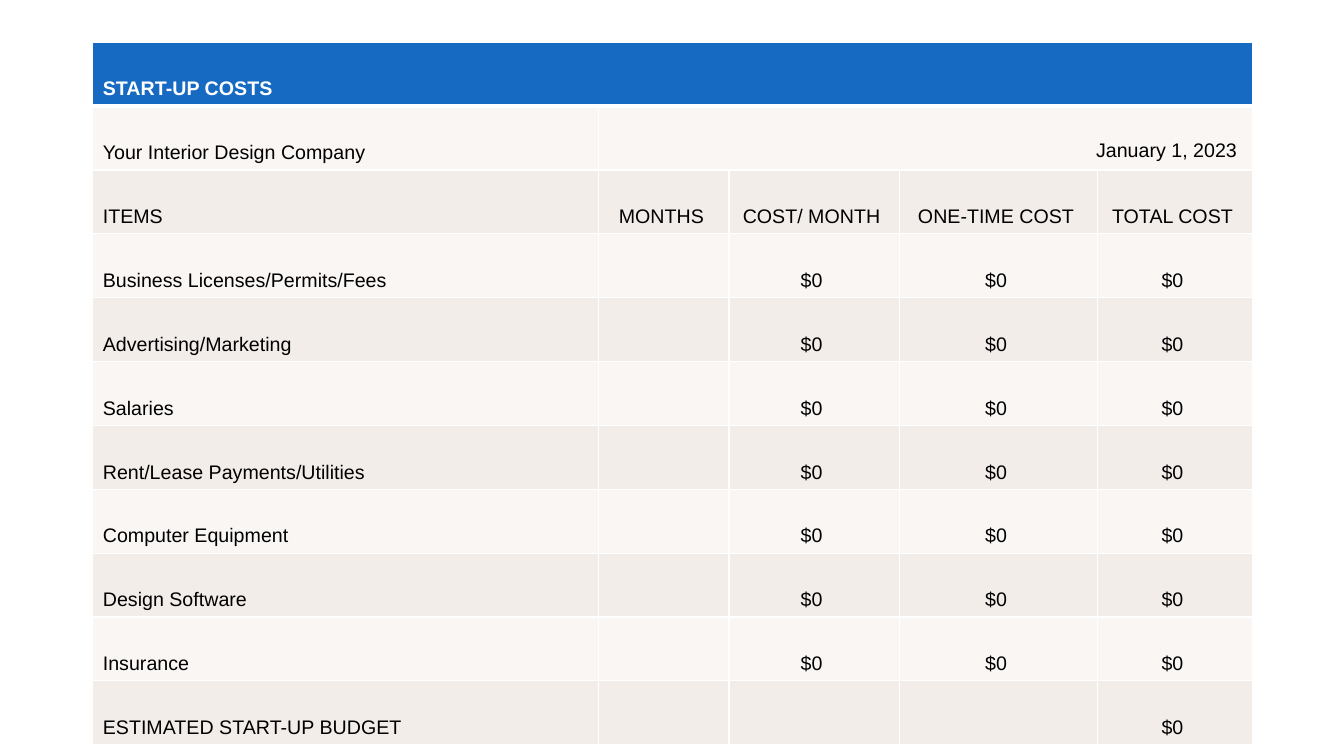
from lxml import etree
from pptx import Presentation
from pptx import util as u
from pptx.dml.color import RGBColor
from pptx.enum import text
from pptx.oxml.ns import qn

LEFT, CENTER, RIGHT = text.PP_ALIGN.LEFT, text.PP_ALIGN.CENTER, text.PP_ALIGN.RIGHT
COLUMN_WIDTHS = [5.02, 1.29, 1.69, 1.97, 1.53]
EXPENSES = [
    "Business Licenses/Permits/Fees",
    "Advertising/Marketing",
    "Salaries",
    "Rent/Lease Payments/Utilities",
    "Computer Equipment",
    "Design Software",
    "Insurance",
]
COST_ROWS = [
    ["START-UP COSTS", "", "", "", ""],
    ["Your Interior Design Company", "January 1, 2023", "", "", ""],
    ["ITEMS", "MONTHS", "COST/ MONTH", "ONE-TIME COST", "TOTAL COST"],
    *[[expense, "", "$0", "$0", "$0"] for expense in EXPENSES],
    ["ESTIMATED START-UP BUDGET", "", "", "", "$0"],
]


def color(hex_string):
    return RGBColor.from_string(hex_string)


class CostSlide:
    font = "Arial"
    size = 14
    ink = "000000"
    white = "FFFFFF"
    header_blue = "166AC2"
    pale = "F9F6F4"
    sand = "E8DCD4"

    def __init__(self, slide):
        self.slide = slide

    def table(self, left, top, height, widths, rows):
        frame = self.slide.shapes.add_table(
            len(rows), len(widths), u.Inches(left), u.Inches(top),
            u.Inches(sum(widths)), u.Inches(height))
        grid = frame.table
        grid.first_row = grid.horz_banding = False
        for column, width in zip(grid.columns, widths):
            column.width = u.Inches(width)
        for r, labels in enumerate(rows):
            for c, label in enumerate(labels):
                cell = grid.cell(r, c)
                self.borders(cell, bottom=3 if r == 0 else 1)
                self.fill(cell, r)
                if label:
                    self.label(cell, label, LEFT if c == 0 else CENTER, header=r == 0)
        return grid

    def borders(self, cell, bottom):
        properties = cell._tc.get_or_add_tcPr()
        for side, points in (("L", 1), ("R", 1), ("T", 1), ("B", bottom)):
            line = etree.SubElement(properties, qn(f"a:ln{side}"), w=str(u.Pt(points)))
            solid = etree.SubElement(line, qn("a:solidFill"))
            etree.SubElement(solid, qn("a:srgbClr"), val=self.white)

    def fill(self, cell, row):
        """Blue header, then pale rows alternating with half-transparent sand."""
        banded = row > 0 and row % 2 == 0
        cell.fill.solid()
        cell.fill.fore_color.rgb = color(
            self.header_blue if row == 0 else self.sand if banded else self.pale)
        if banded:
            tint = cell._tc.tcPr.find(qn("a:solidFill")).find(qn("a:srgbClr"))
            etree.SubElement(tint, qn("a:alpha"), val="50000")

    def label(self, cell, words, align, header):
        cell.vertical_anchor = text.MSO_ANCHOR.BOTTOM
        cell.margin_bottom = u.Inches(0.06)
        cell.margin_right = u.Inches(0.15)
        paragraph = cell.text_frame.paragraphs[0]
        paragraph.text = words
        paragraph.alignment = align
        font = paragraph.runs[0].font
        font.name = self.font
        font.size = u.Pt(self.size)
        font.bold = header
        font.color.rgb = color(self.white if header else self.ink)


def main():
    deck = Presentation()
    deck.slide_width, deck.slide_height = u.Inches(13.33), u.Inches(7.5)
    page = CostSlide(deck.slides.add_slide(deck.slide_layouts[6]))

    costs = page.table(0.92, 0.42, 6.97, COLUMN_WIDTHS, COST_ROWS)
    costs.cell(0, 0).merge(costs.cell(0, 4))
    date = costs.cell(1, 1)
    date.merge(costs.cell(1, 4))
    date.text_frame.paragraphs[0].alignment = RIGHT
    date.margin_bottom = u.Inches(0.08)

    deck.save("out.pptx")


if __name__ == "__main__":
    main()
